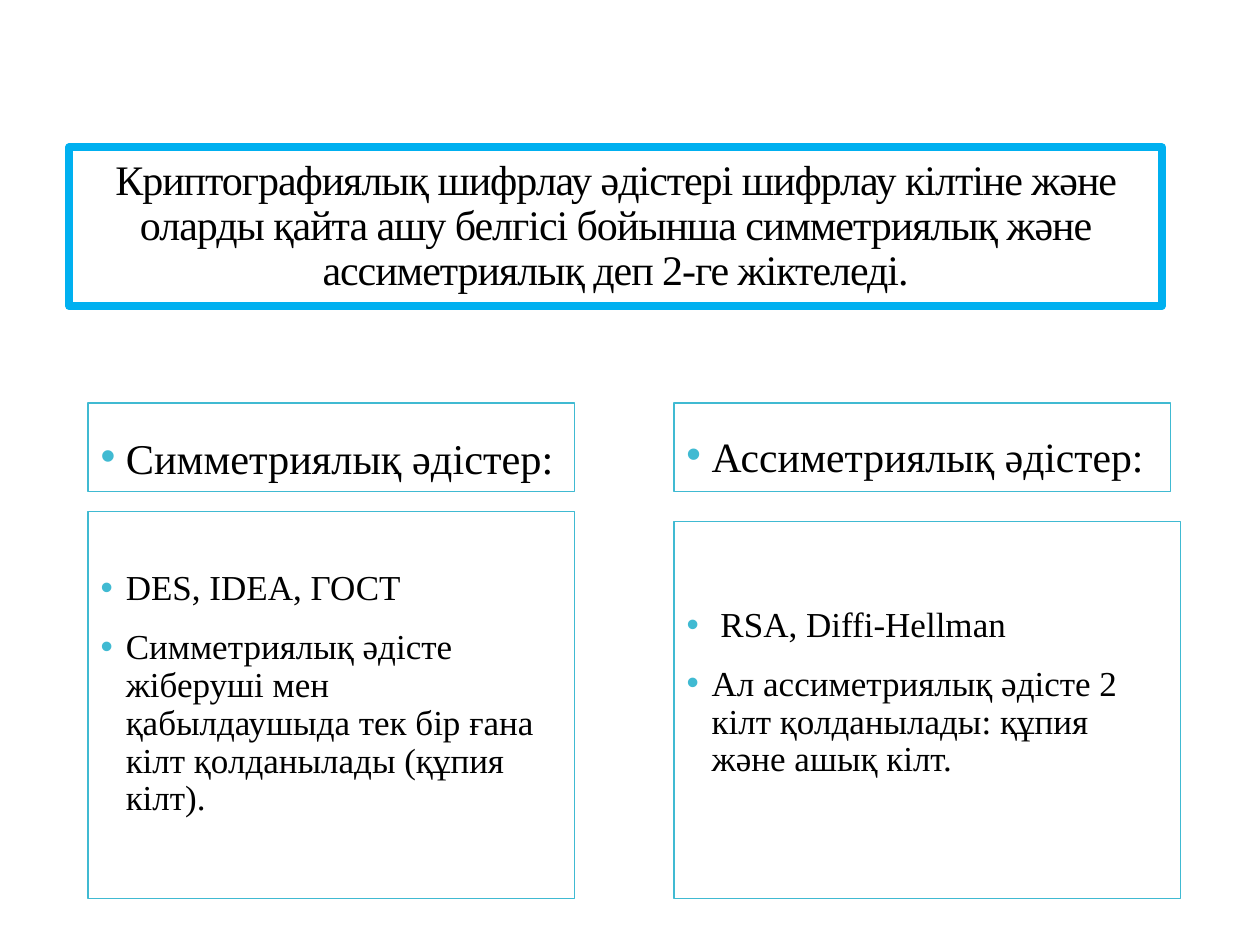
"""Build a slide that sorts encryption methods into symmetric and asymmetric."""
from dataclasses import dataclass

from lxml.etree import SubElement
from pptx import Presentation
from pptx.dml.color import RGBColor
from pptx.enum.text import MSO_ANCHOR, MSO_AUTO_SIZE, PP_ALIGN
from pptx.oxml.ns import qn
from pptx.util import Inches, Pt


@dataclass(frozen=True)
class Theme:
    font: str = "Times New Roman"
    ink: str = "000000"
    paper: str = "FFFFFF"
    frame: str = "00B0F0"
    accent: str = "40BAD2"
    title: float = 24
    body: float = 20
    thick: float = 4.5
    thin: float = 0.85
    gap: float = 12
    indent: float = 0.2


THEME = Theme()
WIDE, HIGH = 10, 7.5
TITLE = ("Криптографиялық шифрлау әдістері шифрлау кілтіне және оларды қайта ашу "
         "белгісі бойынша симметриялық және ассиметриялық деп 2-ге жіктеледі.")
HEAD_TOP, HEAD_HIGH, FLOOR = 3.2, 0.7, 7.13
COLUMNS = [
    dict(left=0.7, head="Симметриялық әдістер:", size=24.2, head_wide=3.86, head_pad=0.39,
         top=4.06, wide=3.86, pad=0.47,
         items=["DES, IDEA, ГОСТ",
                "Симметриялық әдісте жіберуші мен қабылдаушыда тек бір ғана кілт "
                "қолданылады (құпия кілт)."]),
    dict(left=5.35, head="Ассиметриялық әдістер:", size=23.8, head_wide=3.94, head_pad=0.37,
         top=4.14, wide=4.02, pad=0.68,
         items=[" RSA, Diffi-Hellman",
                "Ал ассиметриялық әдісте 2 кілт қолданылады: құпия және ашық кілт."]),
]


def color(code):
    return RGBColor.from_string(code)


def outline(shape, code, width):
    shape.fill.solid()
    shape.fill.fore_color.rgb = color(THEME.paper)
    shape.line.color.rgb = color(code)
    shape.line.width = Pt(width)


def style(para, size, spacing):
    para.line_spacing = spacing
    for run in para.runs:
        run.font.name = THEME.font
        run.font.size = Pt(size)
        run.font.color.rgb = color(THEME.ink)


def bullet(para):
    props = para._p.get_or_add_pPr()
    props.set("marL", str(Inches(THEME.indent)))
    props.set("indent", str(-Inches(THEME.indent)))
    tint = SubElement(props, qn("a:buClr"))
    SubElement(tint, qn("a:srgbClr"), val=THEME.accent)
    SubElement(props, qn("a:buFont"), typeface="Arial")
    SubElement(props, qn("a:buChar"), char="•")


def add_title(slide):
    title = slide.shapes.title
    title.left, title.top, title.width, title.height = map(Inches, (0.55, 1.17, 8.67, 1.26))
    outline(title, THEME.frame, THEME.thick)
    SubElement(title.line._get_or_add_ln(), qn("a:round"))
    frame = title.text_frame
    frame.text = TITLE
    frame.word_wrap = True
    frame.auto_size = MSO_AUTO_SIZE.NONE
    frame.vertical_anchor = MSO_ANCHOR.MIDDLE
    para = frame.paragraphs[0]
    para.alignment = PP_ALIGN.CENTER
    style(para, THEME.title, 0.9)
    para.runs[0]._r.get_or_add_rPr().set("spc", "-60")


def add_list(slide, area, items, size, spacing, pad):
    box = slide.shapes.add_textbox(*map(Inches, area))
    outline(box, THEME.accent, THEME.thin)
    frame = box.text_frame
    frame.word_wrap = True
    frame.vertical_anchor = MSO_ANCHOR.TOP
    frame.margin_top, frame.margin_bottom = Inches(pad), 0
    frame.text = "\n".join(items)
    for index, para in enumerate(frame.paragraphs):
        style(para, size, spacing)
        para.space_before = Pt(THEME.gap if index else 0)
        bullet(para)


def main():
    deck = Presentation()
    deck.slide_width, deck.slide_height = Inches(WIDE), Inches(HIGH)
    slide = deck.slides.add_slide(deck.slide_layouts[5])
    add_title(slide)
    for col in COLUMNS:
        head = (col["left"], HEAD_TOP, col["head_wide"], HEAD_HIGH)
        body = (col["left"], col["top"], col["wide"], FLOOR - col["top"])
        add_list(slide, head, [col["head"]], col["size"], 0.7, col["head_pad"])
        add_list(slide, body, col["items"], THEME.body, 0.9, col["pad"])
    deck.save("out.pptx")


if __name__ == "__main__":
    main()
